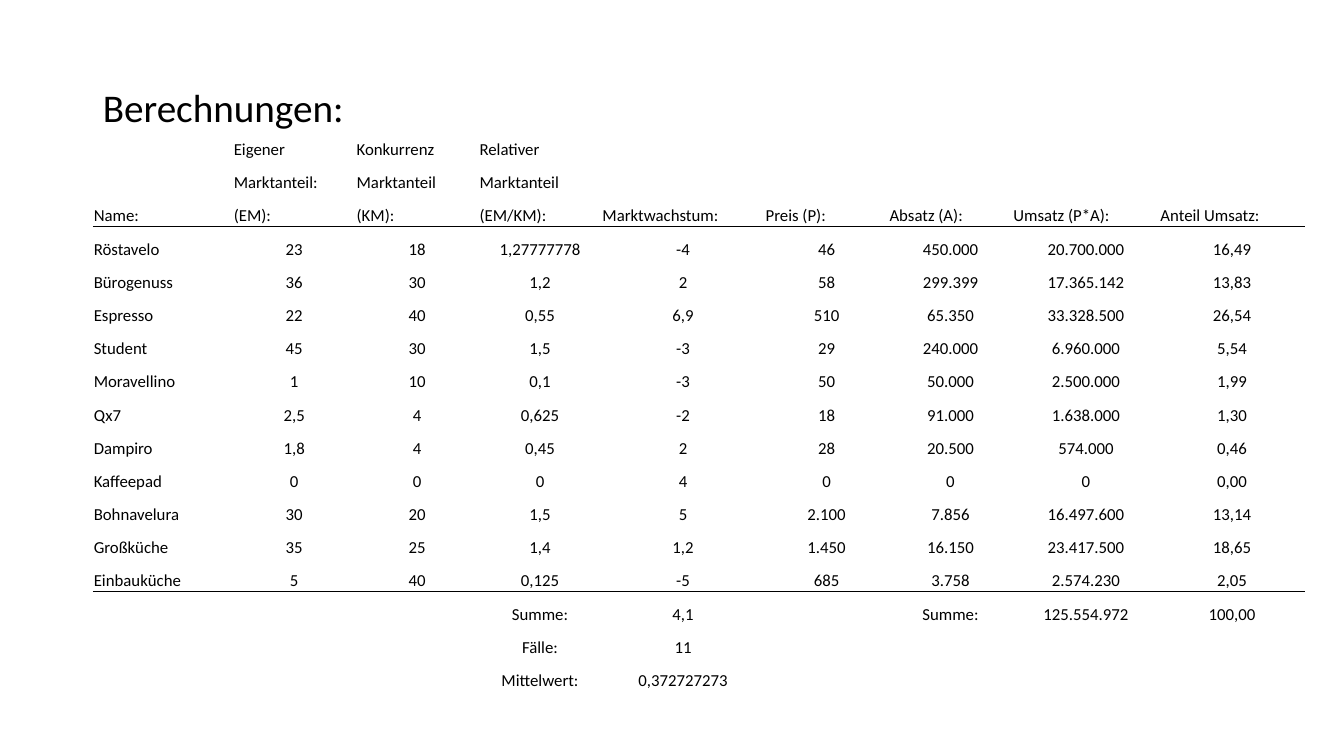
from pptx import Presentation
from pptx.dml.color import RGBColor
from pptx.enum.text import MSO_ANCHOR, MSO_AUTO_SIZE, PP_ALIGN
from pptx.oxml import parse_xml
from pptx.oxml.ns import nsdecls
from pptx.util import Inches, Pt

TOP, BOTTOM = MSO_ANCHOR.TOP, MSO_ANCHOR.BOTTOM
LEFT, CENTER = PP_ALIGN.LEFT, PP_ALIGN.CENTER
NO_AUTOFIT = MSO_AUTO_SIZE.NONE
TITLE_ONLY = 5
FONT = "Calibri"
BLACK = "000000"

COLUMN_WIDTHS = [1.39, 1.22, 1.22, 1.22, 1.62, 1.23, 1.23, 1.46, 1.44]
TABLE_WIDTH, TABLE_HEIGHT = 12.02, 5.6

HEADER_ROWS = [
    ["", "Eigener", "Konkurrenz", "Relativer", "", "", "", "", ""],
    ["", "Marktanteil:", "Marktanteil", "Marktanteil", "", "", "", "", ""],
    ["Name:", "(EM):", "(KM):", "(EM/KM):", "Marktwachstum:", "Preis (P):",
     "Absatz (A):", "Umsatz (P*A):", "Anteil Umsatz:"],
]
PRODUCT_ROWS = [
    ["Röstavelo", "23", "18", "1,27777778", "-4", "46", "450.000", "20.700.000", "16,49"],
    ["Bürogenuss", "36", "30", "1,2", "2", "58", "299.399", "17.365.142", "13,83"],
    ["Espresso", "22", "40", "0,55", "6,9", "510", "65.350", "33.328.500", "26,54"],
    ["Student", "45", "30", "1,5", "-3", "29", "240.000", "6.960.000", "5,54"],
    ["Moravellino", "1", "10", "0,1", "-3", "50", "50.000", "2.500.000", "1,99"],
    ["Qx7", "2,5", "4", "0,625", "-2", "18", "91.000", "1.638.000", "1,30"],
    ["Dampiro", "1,8", "4", "0,45", "2", "28", "20.500", "574.000", "0,46"],
    ["Kaffeepad", "0", "0", "0", "4", "0", "0", "0", "0,00"],
    ["Bohnavelura", "30", "20", "1,5", "5", "2.100", "7.856", "16.497.600", "13,14"],
    ["Großküche", "35", "25", "1,4", "1,2", "1.450", "16.150", "23.417.500", "18,65"],
    ["Einbauküche", "5", "40", "0,125", "-5", "685", "3.758", "2.574.230", "2,05"],
]
SUMMARY_ROWS = [
    ["", "", "", "Summe:", "4,1", "", "Summe:", "125.554.972", "100,00"],
    ["", "", "", "Fälle:", "11", "", "", "", ""],
    ["", "", "", "Mittelwert:", "0,372727273", "", "", "", ""],
]


def color(hex_value):
    return RGBColor.from_string(hex_value)


def format_text(para, size, alignment):
    para.alignment = alignment
    for span in para.runs:
        span.font.name = FONT
        span.font.size = Pt(size)
        span.font.color.rgb = color(BLACK)


def add_title(page, text):
    title = page.shapes.title
    title.left, title.top = Inches(0.92), Inches(0.83)
    title.width, title.height = Inches(11.5), Inches(0.6)
    frame = title.text_frame
    frame.text = text
    frame.word_wrap = True
    frame.auto_size = NO_AUTOFIT
    frame.vertical_anchor = TOP
    para = frame.paragraphs[0]
    para.line_spacing = 0.9
    format_text(para, 28, LEFT)


def set_borders(cell, drawn_tags):
    """Draw a 1 pt line on the named sides of a cell and none elsewhere."""
    solid = f'<a:solidFill><a:srgbClr val="{BLACK}"/></a:solidFill>'
    for tag in ("lnL", "lnR", "lnT", "lnB"):
        paint = solid if tag in drawn_tags else "<a:noFill/>"
        cell._tc.get_or_add_tcPr().append(parse_xml(
            f'<a:{tag} {nsdecls("a")} w="{Pt(1)}">{paint}</a:{tag}>'))


def fill_cell(cell, text, alignment, border_tags):
    cell.text_frame.text = text
    cell.vertical_anchor = BOTTOM
    cell.margin_left = cell.margin_right = cell.margin_top = Inches(0.01)
    cell.margin_bottom = 0
    format_text(cell.text_frame.paragraphs[0], 12, alignment)
    set_borders(cell, border_tags)
    cell.fill.background()


def add_calculation_table(page):
    rows = HEADER_ROWS + PRODUCT_ROWS + SUMMARY_ROWS
    first_product = len(HEADER_ROWS)
    first_summary = first_product + len(PRODUCT_ROWS)
    rules = (first_product, first_summary)  # a line lies above these rows

    table = page.shapes.add_table(
        len(rows), len(COLUMN_WIDTHS), Inches(0.92), Inches(1.26),
        Inches(TABLE_WIDTH), Inches(TABLE_HEIGHT)).table
    table.first_row = table.horz_banding = False
    width_scale = TABLE_WIDTH / sum(COLUMN_WIDTHS)
    for column, width in zip(table.columns, COLUMN_WIDTHS):
        column.width = Inches(width * width_scale)

    for row_index, row in enumerate(rows):
        table.rows[row_index].height = Inches(TABLE_HEIGHT / len(rows))
        border_tags = []
        if row_index in rules:
            border_tags.append("lnT")
        if row_index + 1 in rules:
            border_tags.append("lnB")
        for column_index, text in enumerate(row):
            is_label = row_index < first_product or column_index == 0
            fill_cell(table.cell(row_index, column_index), text,
                      LEFT if is_label else CENTER, border_tags)


def main():
    deck = Presentation()
    deck.slide_width, deck.slide_height = Inches(13.33), Inches(7.5)
    page = deck.slides.add_slide(deck.slide_layouts[TITLE_ONLY])

    # Heading
    add_title(page, "Berechnungen:")

    # Market figures with totals
    add_calculation_table(page)

    deck.save("out.pptx")


if __name__ == "__main__":
    main()
